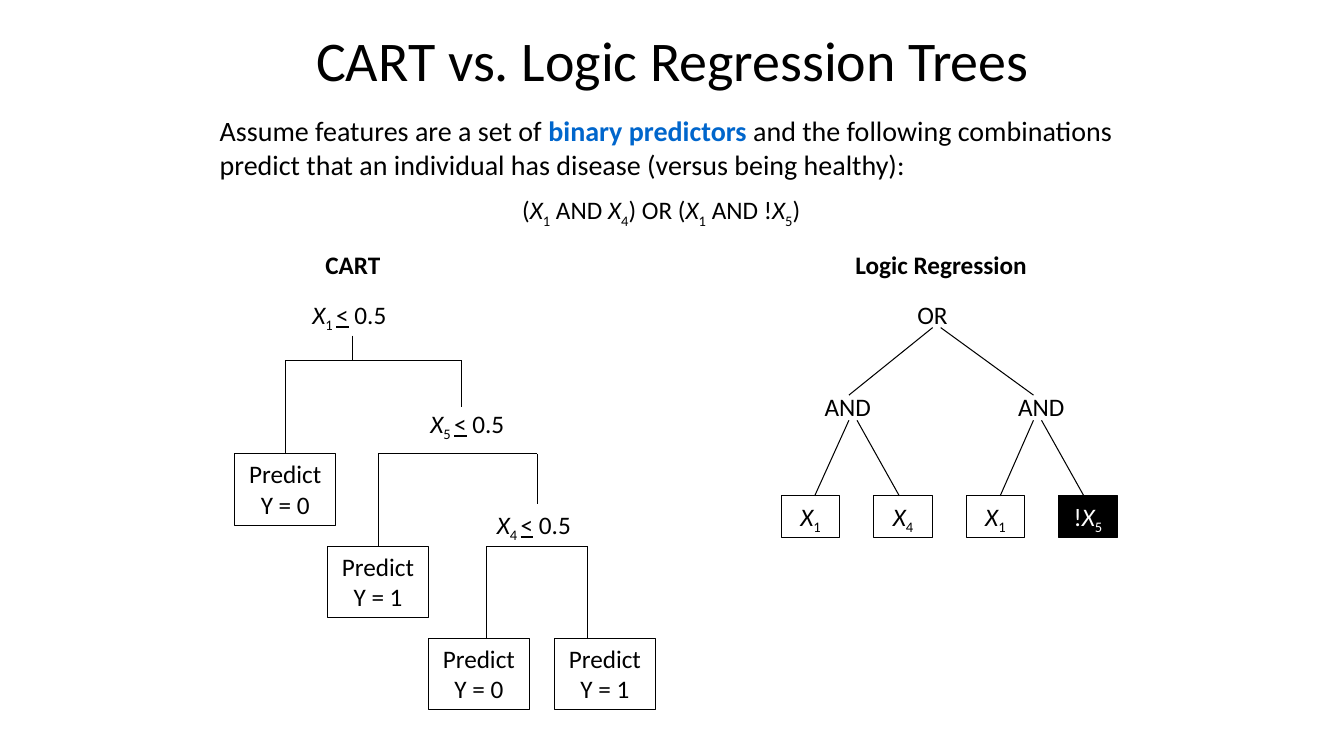
from lxml import etree
from pptx import Presentation
from pptx.dml.color import RGBColor
from pptx.enum.shapes import MSO_CONNECTOR, MSO_SHAPE
from pptx.enum.text import MSO_ANCHOR, PP_ALIGN
from pptx.oxml.ns import qn
from pptx.util import Inches, Pt

BLACK = RGBColor(0x00, 0x00, 0x00)
WHITE = RGBColor(0xFF, 0xFF, 0xFF)
BLUE = RGBColor(0x00, 0x66, 0xCC)
LEFT, CENTER = PP_ALIGN.LEFT, PP_ALIGN.CENTER
TOP, MIDDLE = MSO_ANCHOR.TOP, MSO_ANCHOR.MIDDLE
STRAIGHT = MSO_CONNECTOR.STRAIGHT
RECTANGLE = MSO_SHAPE.RECTANGLE

BOLD, ITALIC, UNDERLINE = {"bold": True}, {"italic": True}, {"underline": True}
SUBSCRIPT = {"baseline": "-25000"}
KEY_TERM = {"bold": True, "color": BLUE}


def variable(index):
    return [("X", ITALIC), (index, SUBSCRIPT)]


TITLE = [[("CART vs. Logic Regression Trees", {})]]
INTRODUCTION = [
    [("Assume features are a set of ", {}), ("binary predictors", KEY_TERM),
     (" and the following combinations", {})],
    [("predict that an individual has disease (versus being healthy):", {})],
]
FORMULA = [("(", {}), *variable("1"), (" AND ", {}), *variable("4"), (") OR (", {}),
           *variable("1"), (" AND !", {}), *variable("5"), (")", {})]
HEADINGS = [("CART", 3, 1), ("Logic Regression", 8.25, 2.17)]

SPLITS = [("1", 3, 2.92), ("5", 4.17, 4), ("4", 4.83, 5)]
FORKS = [
    (2.83, 4.58, 3.58, 4.5, 4.04),
    (3.75, 5.33, 4.5, 5.42, 5),
    (4.83, 5.83, 5.42, 6.33, 6.33),
]
STEM = (3.5, 3.33, 3.5, 3.58)
PREDICTIONS = [("Y = 0", 2.33, 4.5), ("Y = 1", 3.25, 5.42),
               ("Y = 0", 4.25, 6.33), ("Y = 1", 5.5, 6.33)]

GATES = [("OR", 9, 2.92, 0.5), ("AND", 8.08, 3.83, 0.66), ("AND", 10, 3.83, 0.66)]
BRANCHES = [
    (9.29, 3.25, 8.42, 10.25, 3.92),
    (8.46, 4.17, 8.08, 8.92, 4.92),
    (10.29, 4.17, 9.92, 10.75, 4.92),
]
BRANCH_GAP = 0.04
LEAVES = [
    (variable("1"), None),
    (variable("4"), None),
    (variable("1"), None),
    ([("!", {}), *variable("5")], BLACK),
]
LEAF_LEFT, LEAF_TOP, LEAF_STEP = 7.75, 4.92, 11 / 12

presentation = Presentation()
presentation.slide_width = Inches(13.33)
presentation.slide_height = Inches(7.5)
slide = presentation.slides.add_slide(presentation.slide_layouts[6])


def write_paragraph(paragraph, runs, size, color, align):
    paragraph.alignment = align
    for text, style in runs:
        run = paragraph.add_run()
        run.text = text
        values = {"name": "Calibri", "size": Pt(size), "color": color, **style}
        run.font.color.rgb = values.pop("color")
        baseline = values.pop("baseline", None)
        for name, value in values.items():
            setattr(run.font, name, value)
        if baseline:
            run._r.get_or_add_rPr().set("baseline", baseline)


def write_text(shape, paragraphs, size=18, color=BLACK, align=CENTER, anchor=TOP, wrap=True):
    frame = shape.text_frame
    frame.word_wrap = wrap
    frame.vertical_anchor = anchor
    for number, runs in enumerate(paragraphs):
        paragraph = frame.add_paragraph() if number else frame.paragraphs[0]
        write_paragraph(paragraph, runs, size, color, align)
    return frame


def add_text(left, top, width, height, paragraphs, **options):
    box = slide.shapes.add_textbox(*map(Inches, (left, top, width, height)))
    return write_text(box, paragraphs, **options)


def add_box(left, top, width, height, paragraphs, fill=None):
    box = slide.shapes.add_shape(RECTANGLE, *map(Inches, (left, top, width, height)))
    box.shadow.inherit = False
    if fill is None:
        box.fill.background()
    else:
        box.fill.solid()
        box.fill.fore_color.rgb = fill
    box.line.color.rgb = BLACK
    box.line.width = Pt(0.75)
    write_text(box, paragraphs, color=BLACK if fill is None else WHITE)


def add_line(*ends):
    line = slide.shapes.add_connector(STRAIGHT, *map(Inches, ends))
    line.line.color.rgb = BLACK
    line.line.width = Pt(0.75)
    etree.SubElement(line._element.spPr, qn("a:effectLst"))


title_frame = add_text(2.17, 0, 9, 1.25, TITLE, size=40, anchor=MIDDLE)
title_frame.paragraphs[0].line_spacing = 0.9

introduction_frame = add_text(2.08, 1.08, 9.15, 1.2, INTRODUCTION,
                              size=20, align=LEFT, wrap=False)
formula_paragraph = introduction_frame.add_paragraph()
write_paragraph(formula_paragraph, FORMULA, 18, BLACK, LEFT)
formula_paragraph.space_before = Pt(9.8)
formula_paragraph._p.get_or_add_pPr().set("marL", str(Inches(3)))

for heading, left, width in HEADINGS:
    add_text(left, 2.42, width, 0.4, [[(heading, BOLD)]])

add_line(*STEM)
for left, right, top, left_bottom, right_bottom in FORKS:
    add_line(left, top, right, top)
    add_line(left, top, left, left_bottom)
    add_line(right, top, right, right_bottom)
for index, left, top in SPLITS:
    condition = [*variable(index + " "), ("<", UNDERLINE), (" 0.5", {})]
    add_text(left, top, 0.97, 0.4, [condition], align=LEFT, wrap=False)
for outcome, left, top in PREDICTIONS:
    add_box(left, top, 1, 0.71, [[("Predict", {})], [(outcome, {})]])

for center, top, left, right, bottom in BRANCHES:
    add_line(center - BRANCH_GAP, top, left, bottom)
    add_line(center + BRANCH_GAP, top, right, bottom)
for gate, left, top, width in GATES:
    add_text(left, top, width, 0.4, [[(gate, {})]], align=LEFT, wrap=False)
for position, (runs, fill) in enumerate(LEAVES):
    add_box(LEAF_LEFT + position * LEAF_STEP, LEAF_TOP, 0.58, 0.41, [runs], fill)

presentation.save("out.pptx")
